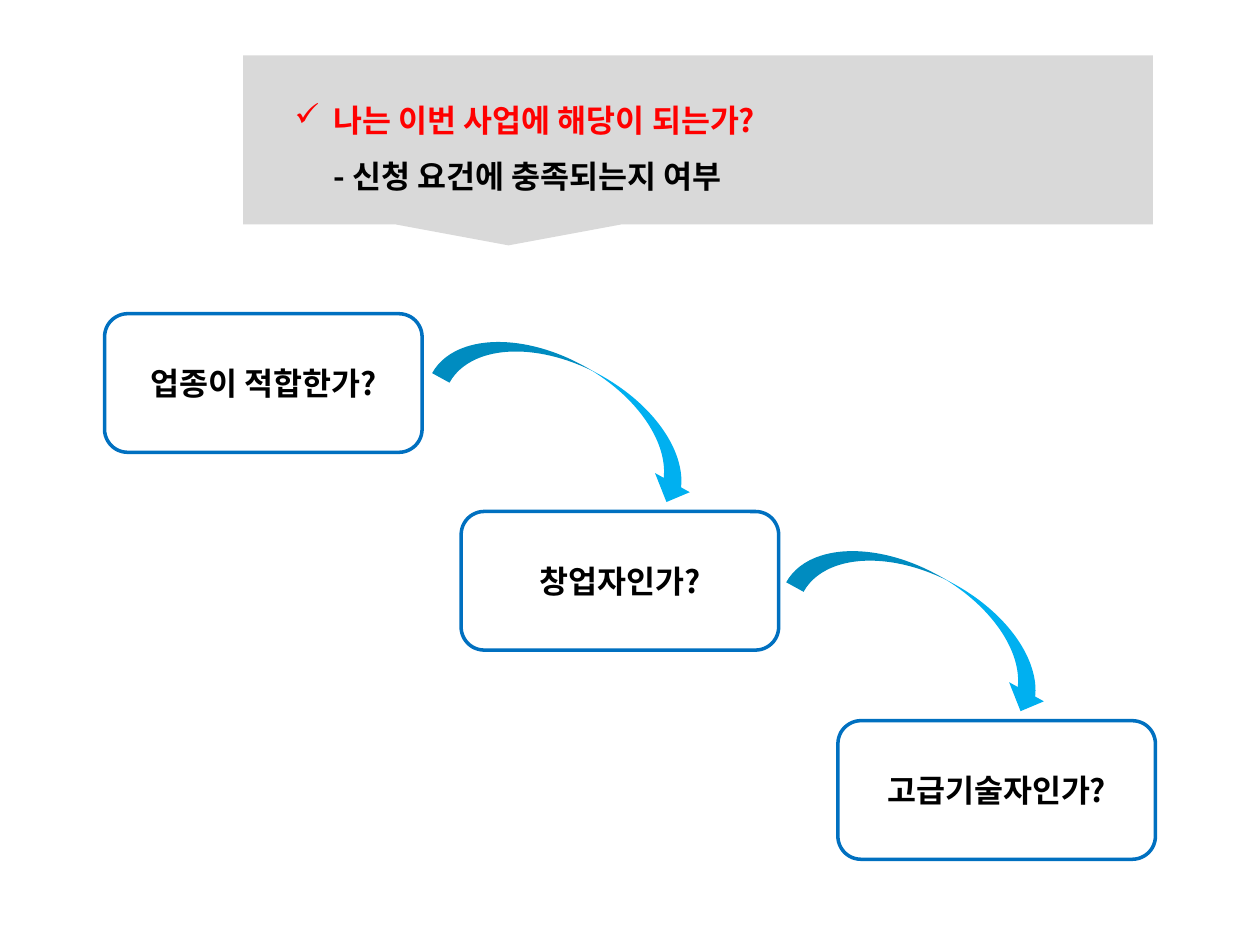
import pptx
import pptx.util
import pptx.dml.color
import pptx.enum.shapes
import pptx.enum.text
import pptx.oxml.ns
from dataclasses import dataclass
from lxml import etree
from pptx.util import Inches

RGB = pptx.dml.color.RGBColor
SHAPE = pptx.enum.shapes.MSO_SHAPE
ALIGN = pptx.enum.text.PP_ALIGN
ANCHOR = pptx.enum.text.MSO_ANCHOR
qn = pptx.oxml.ns.qn


@dataclass(frozen=True)
class Theme:
    font: str = "Noto Sans CJK KR"
    size: int = 18
    outline_width: int = 2
    text: RGB = RGB(0x00, 0x00, 0x00)
    accent: RGB = RGB(0xFF, 0x00, 0x00)
    banner: RGB = RGB(0xD9, 0xD9, 0xD9)
    box: RGB = RGB(0xFF, 0xFF, 0xFF)
    outline: RGB = RGB(0x00, 0x70, 0xC0)
    arrow: RGB = RGB(0x00, 0xB0, 0xF0)


THEME = Theme()


def add_flat_shape(slide, kind, left, top, width, height, fill, outline=None):
    shape = slide.shapes.add_shape(
        kind, Inches(left), Inches(top), Inches(width), Inches(height))
    shape.shadow.inherit = False
    shape.fill.solid()
    shape.fill.fore_color.rgb = fill
    if outline is None:
        shape.line.fill.background()
    else:
        shape.line.color.rgb = outline
        shape.line.width = pptx.util.Pt(THEME.outline_width)
    return shape


def style_paragraph(paragraph):
    font = paragraph.font
    font.size = pptx.util.Pt(THEME.size)
    font.bold = True
    font.color.rgb = THEME.text
    font.name = THEME.font
    # Korean letters take the East Asian typeface
    properties = paragraph._p.pPr.find(qn("a:defRPr"))
    etree.SubElement(properties, qn("a:ea")).set("typeface", THEME.font)


def set_check_bullet(paragraph, indent):
    properties = paragraph._p.get_or_add_pPr()
    properties.set("marL", str(Inches(indent)))
    properties.set("indent", str(-Inches(indent)))
    bullet = etree.Element(qn("a:buChar"))
    bullet.set("char", "✓")
    properties.find(qn("a:defRPr")).addprevious(bullet)


def add_question_banner(slide, left, top, width, height):
    add_flat_shape(slide, SHAPE.RECTANGULAR_CALLOUT,
                   left, top, width, height, THEME.banner)
    question_box = slide.shapes.add_textbox(
        Inches(left + 0.31), Inches(top + 0.16),
        Inches(width - 0.45), Inches(height - 0.33))
    question_box.text_frame.word_wrap = True
    paragraph = question_box.text_frame.paragraphs[0]
    paragraph.line_spacing = 1.5
    style_paragraph(paragraph)
    set_check_bullet(paragraph, 0.31)
    question = paragraph.add_run()
    question.text = "나는 이번 사업에 해당이 되는가?"
    question.font.color.rgb = THEME.accent
    paragraph.add_line_break()
    paragraph.add_run().text = "- 신청 요건에 충족되는지 여부"


def add_step(slide, left, top, width, height, label):
    step = add_flat_shape(slide, SHAPE.ROUNDED_RECTANGLE,
                          left, top, width, height, THEME.box, THEME.outline)
    frame = step.text_frame
    frame.word_wrap = True
    frame.vertical_anchor = ANCHOR.MIDDLE
    paragraph = frame.paragraphs[0]
    paragraph.text = label
    paragraph.alignment = ALIGN.CENTER
    style_paragraph(paragraph)


def add_step_arrow(slide, left, top, width, height):
    arrow = add_flat_shape(slide, SHAPE.CURVED_DOWN_ARROW,
                           left, top, width, height, THEME.arrow)
    arrow.rotation = 28.8


def add_staircase(slide, left, top):
    # Each step: offset from the staircase corner, and its label
    steps = [
        (0, 0, "업종이 적합한가?"),
        (2.83, 1.57, "창업자인가?"),
        (5.82, 3.23, "고급기술자인가?"),
    ]
    for dx, dy, label in steps:
        add_step(slide, left + dx, top + dy, 2.52, 1.1, label)
    for dx, dy in [(2.61, 0.43), (5.42, 2.09)]:
        add_step_arrow(slide, left + dx, top + dy, 2.28, 0.63)


def main():
    deck = pptx.Presentation()
    deck.slide_width = Inches(10)
    deck.slide_height = Inches(7.5)
    slide = deck.slides.add_slide(deck.slide_layouts[6])
    add_question_banner(slide, 1.93, 0.44, 7.22, 1.34)
    add_staircase(slide, 0.83, 2.49)
    deck.save("out.pptx")


if __name__ == "__main__":
    main()
